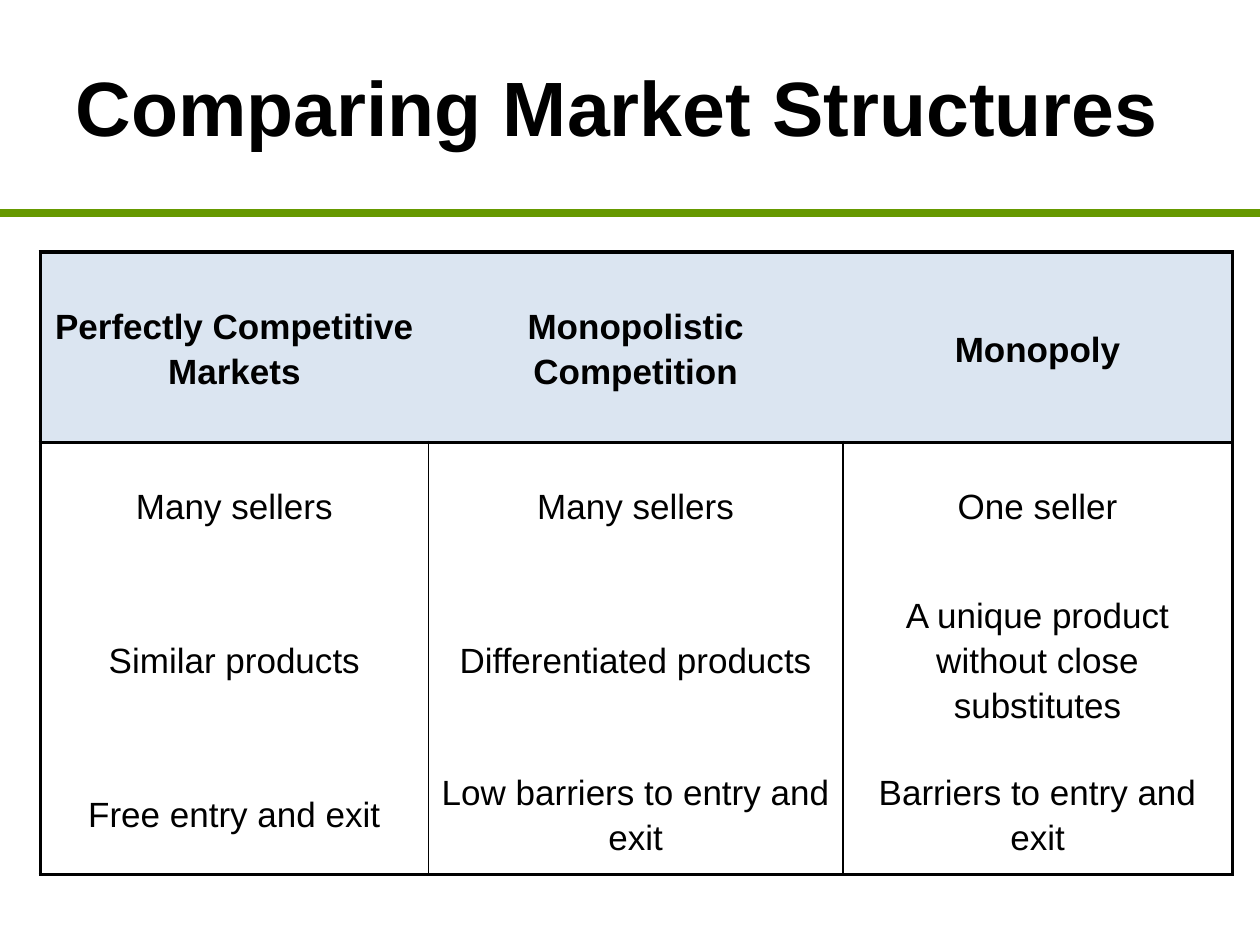
"""Build a slide that compares three market structures in a ruled table."""
from dataclasses import dataclass

import pptx
import pptx.dml.color
import pptx.enum.shapes
import pptx.enum.text
import pptx.oxml.ns
import pptx.util
from lxml import etree

TITLE = "Comparing Market Structures"
ROWS = [
    ("Perfectly Competitive Markets", "Monopolistic Competition", "Monopoly"),
    ("Many sellers", "Many sellers", "One seller"),
    ("Similar products", "Differentiated products", "A unique product without close substitutes"),
    ("Free entry and exit", "Low barriers to entry and exit", "Barriers to entry and exit"),
]
COLUMN_WIDTHS = (3.08, 3.29, 3.09)
ROW_HEIGHTS = (1.51, 0.98, 1.47, 0.98)
SLIDE_SIZE = (10, 7.5)
TITLE_BOX = (0.5, 0, 9, 1.67)
TABLE_CORNER = (0.32, 2)
RULE_TOP = 1.69


@dataclass(frozen=True)
class Theme:
    font: str = "Arial"
    ink: str = "000000"
    rule: str = "669900"
    header: str = "DBE5F1"
    title_size: float = 44
    cell_size: float = 20
    rule_width: float = 4.5
    frame_width: float = 2.25
    divider_width: float = 1
    line_spacing: float = 1.15
    cell_inset: float = 0.07


THEME = Theme()


def inches(*values):
    return [pptx.util.Inches(value) for value in values]


def colour(code):
    return pptx.dml.color.RGBColor.from_string(code)


def add_span(para, text, size, bold):
    span = para.add_run()
    span.text = text
    span.font.name = THEME.font
    span.font.size = pptx.util.Pt(size)
    span.font.bold = bold
    span.font.color.rgb = colour(THEME.ink)


def add_title(page):
    box = page.shapes.title
    box.left, box.top, box.width, box.height = inches(*TITLE_BOX)
    box.text_frame.word_wrap = True
    box.text_frame.vertical_anchor = pptx.enum.text.MSO_ANCHOR.MIDDLE
    para = box.text_frame.paragraphs[0]
    para.alignment = pptx.enum.text.PP_ALIGN.LEFT
    add_span(para, TITLE, THEME.title_size, True)


def add_rule(page):
    straight = pptx.enum.shapes.MSO_CONNECTOR.STRAIGHT
    rule = page.shapes.add_connector(straight, *inches(0, RULE_TOP, SLIDE_SIZE[0], RULE_TOP))
    rule.line.color.rgb = colour(THEME.rule)
    rule.line.width = pptx.util.Pt(THEME.rule_width)
    etree.SubElement(rule.element.spPr, pptx.oxml.ns.qn("a:effectLst"))


def border_widths(row, column):
    last_row, last_column = len(ROWS) - 1, len(COLUMN_WIDTHS) - 1
    divider = THEME.divider_width if row else 0
    return {
        "L": THEME.frame_width if column == 0 else divider,
        "R": THEME.frame_width if column == last_column else divider,
        "T": THEME.frame_width if row < 2 else 0,
        "B": THEME.frame_width if row in (0, last_row) else 0,
    }


def set_borders(cell, widths):
    qn = pptx.oxml.ns.qn
    properties = cell._tc.get_or_add_tcPr()
    for position, (side, width) in enumerate(widths.items()):
        line = etree.Element(qn(f"a:ln{side}"), w=str(int(pptx.util.Pt(width))))
        if width:
            fill = etree.SubElement(line, qn("a:solidFill"))
            etree.SubElement(fill, qn("a:srgbClr"), val=THEME.ink)
        else:
            etree.SubElement(line, qn("a:noFill"))
        properties.insert(position, line)


def format_cell(cell, text, row, column):
    cell.margin_left = cell.margin_right = pptx.util.Inches(THEME.cell_inset)
    cell.margin_top = cell.margin_bottom = 0
    cell.vertical_anchor = pptx.enum.text.MSO_ANCHOR.MIDDLE
    if row == 0:
        cell.fill.solid()
        cell.fill.fore_color.rgb = colour(THEME.header)
    else:
        cell.fill.background()
    para = cell.text_frame.paragraphs[0]
    para.alignment = pptx.enum.text.PP_ALIGN.CENTER
    para.line_spacing = THEME.line_spacing
    add_span(para, text, THEME.cell_size, row == 0)
    set_borders(cell, border_widths(row, column))


def add_comparison(page):
    area = inches(*TABLE_CORNER, sum(COLUMN_WIDTHS), sum(ROW_HEIGHTS))
    table = page.shapes.add_table(len(ROWS), len(COLUMN_WIDTHS), *area).table
    table.horz_banding = False
    table.first_row = False
    for column, width in zip(table.columns, inches(*COLUMN_WIDTHS)):
        column.width = width
    for row, height in zip(table.rows, inches(*ROW_HEIGHTS)):
        row.height = height
    for row, texts in enumerate(ROWS):
        for column, text in enumerate(texts):
            format_cell(table.cell(row, column), text, row, column)


def main():
    deck = pptx.Presentation()
    deck.slide_width, deck.slide_height = inches(*SLIDE_SIZE)
    page = deck.slides.add_slide(deck.slide_layouts[5])
    add_rule(page)
    add_title(page)
    add_comparison(page)
    deck.save("out.pptx")


if __name__ == "__main__":
    main()
